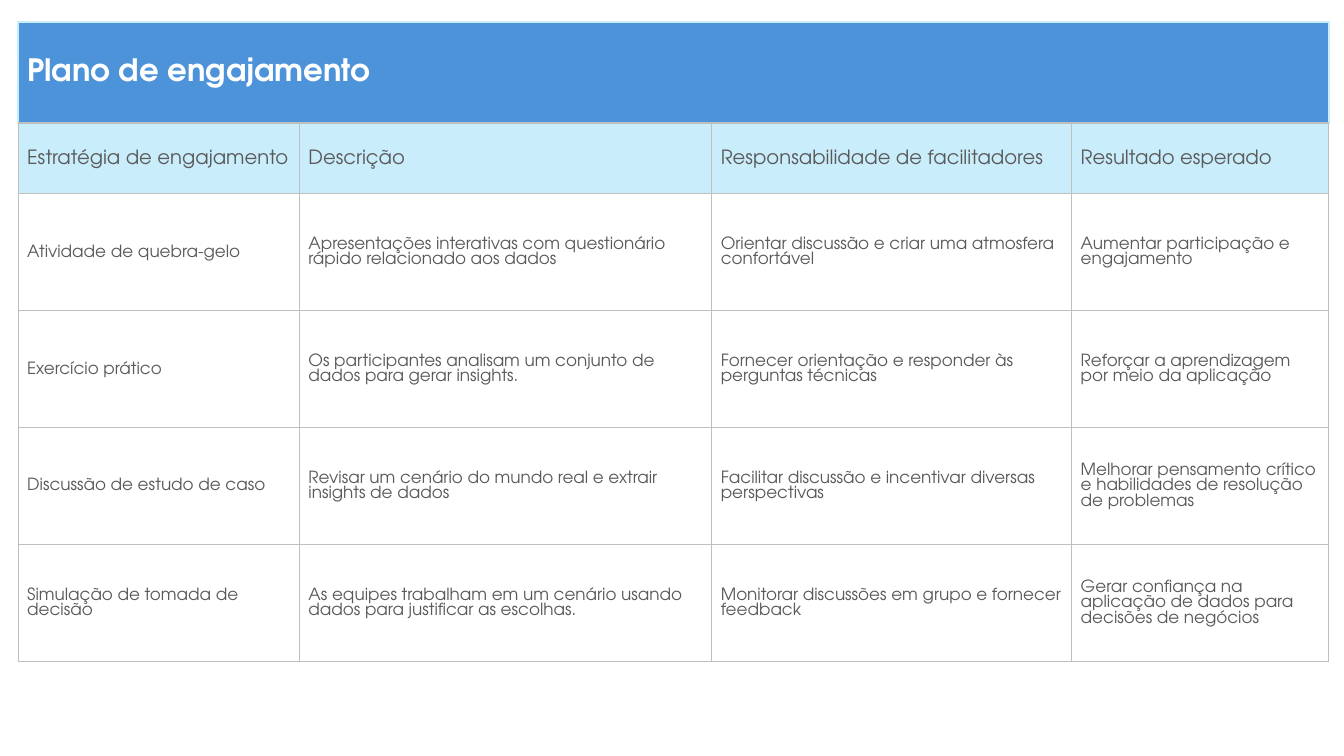
from lxml import etree
from pptx import Presentation
from pptx.dml.color import RGBColor
from pptx.enum.text import MSO_ANCHOR
from pptx.oxml.ns import qn
from pptx.util import Inches, Pt

TITLE = "Plano de engajamento"
HEADS = ["Estratégia de engajamento", "Descrição",
         "Responsabilidade de facilitadores", "Resultado esperado"]
PLAN = [
    ["Atividade de quebra-gelo",
     "Apresentações interativas com questionário rápido relacionado aos dados",
     "Orientar discussão e criar uma atmosfera confortável",
     "Aumentar participação e engajamento"],
    ["Exercício prático",
     "Os participantes analisam um conjunto de dados para gerar insights.",
     "Fornecer orientação e responder às perguntas técnicas",
     "Reforçar a aprendizagem \vpor meio da aplicação"],
    ["Discussão de estudo de caso",
     "Revisar um cenário do mundo real e extrair insights de dados",
     "Facilitar discussão e incentivar diversas perspectivas",
     "Melhorar pensamento crítico e habilidades de resolução de problemas"],
    ["Simulação de tomada de decisão",
     "As equipes trabalham em um cenário usando dados para justificar as escolhas.",
     "Monitorar discussões em grupo e fornecer feedback",
     "Gerar confiança na aplicação de dados para decisões de negócios"],
]
WIDTHS = [2.79, 4.09, 3.57, 2.55]
HEIGHTS = [1, 0.7] + [1.16] * len(PLAN)

FONT = "TeX Gyre Adventor"
WHITE = RGBColor(0xFF, 0xFF, 0xFF)
BLUE = RGBColor(0x4D, 0x93, 0xD9)
PALE = RGBColor(0xCA, 0xED, 0xFB)
GRAY = RGBColor(0xBF, 0xBF, 0xBF)
INK = RGBColor(0x59, 0x59, 0x59)
MIDDLE = MSO_ANCHOR.MIDDLE

# size, text colour, bold, fill
BANNER = (22, WHITE, True, BLUE)
HEADER = (14, INK, False, PALE)
BODY = (12, INK, False, None)


def edge(cell, side, color, width):
    """Draw one border of a cell; sides must come in the order L, R, T, B."""
    line = etree.SubElement(cell._tc.get_or_add_tcPr(), qn(f"a:ln{side}"),
                            w=str(Pt(width)))
    solid = etree.SubElement(line, qn("a:solidFill"))
    etree.SubElement(solid, qn("a:srgbClr"), val=str(color))


def style(cell, look):
    size, color, bold, fill = look
    for side in "LRTB":
        if look is BANNER and side != "B":
            edge(cell, side, PALE, 1.5)
        else:
            edge(cell, side, GRAY, 1)
    if fill is None:
        cell.fill.background()
    else:
        cell.fill.solid()
        cell.fill.fore_color.rgb = fill
    cell.vertical_anchor = MIDDLE
    cell.margin_left = Inches(0.09)
    cell.margin_right = cell.margin_top = Inches(0.01)
    cell.margin_bottom = 0
    for para in cell.text_frame.paragraphs:
        for font in [para.font] + [run.font for run in para.runs]:
            font.name = FONT
            font.size = Pt(size)
            font.bold = bold
            font.color.rgb = color


def main():
    deck = Presentation()
    deck.slide_width, deck.slide_height = Inches(13.33), Inches(7.5)
    slide = deck.slides.add_slide(deck.slide_layouts[6])
    table = slide.shapes.add_table(
        len(HEIGHTS), len(WIDTHS), Inches(0.18), Inches(0.22),
        Inches(sum(WIDTHS)), Inches(sum(HEIGHTS))).table
    table.first_row = table.horz_banding = False
    for col, width in zip(table.columns, WIDTHS):
        col.width = Inches(width)
    for row, height in zip(table.rows, HEIGHTS):
        row.height = Inches(height)

    last = len(WIDTHS) - 1
    table.cell(0, 0).merge(table.cell(0, last))
    rows = [[TITLE] + [""] * last, HEADS] + PLAN
    looks = [BANNER, HEADER] + [BODY] * len(PLAN)
    for r, (texts, look) in enumerate(zip(rows, looks)):
        for c, text in enumerate(texts):
            cell = table.cell(r, c)
            cell.text_frame.text = text
            style(cell, look)
    deck.save("out.pptx")


if __name__ == "__main__":
    main()
